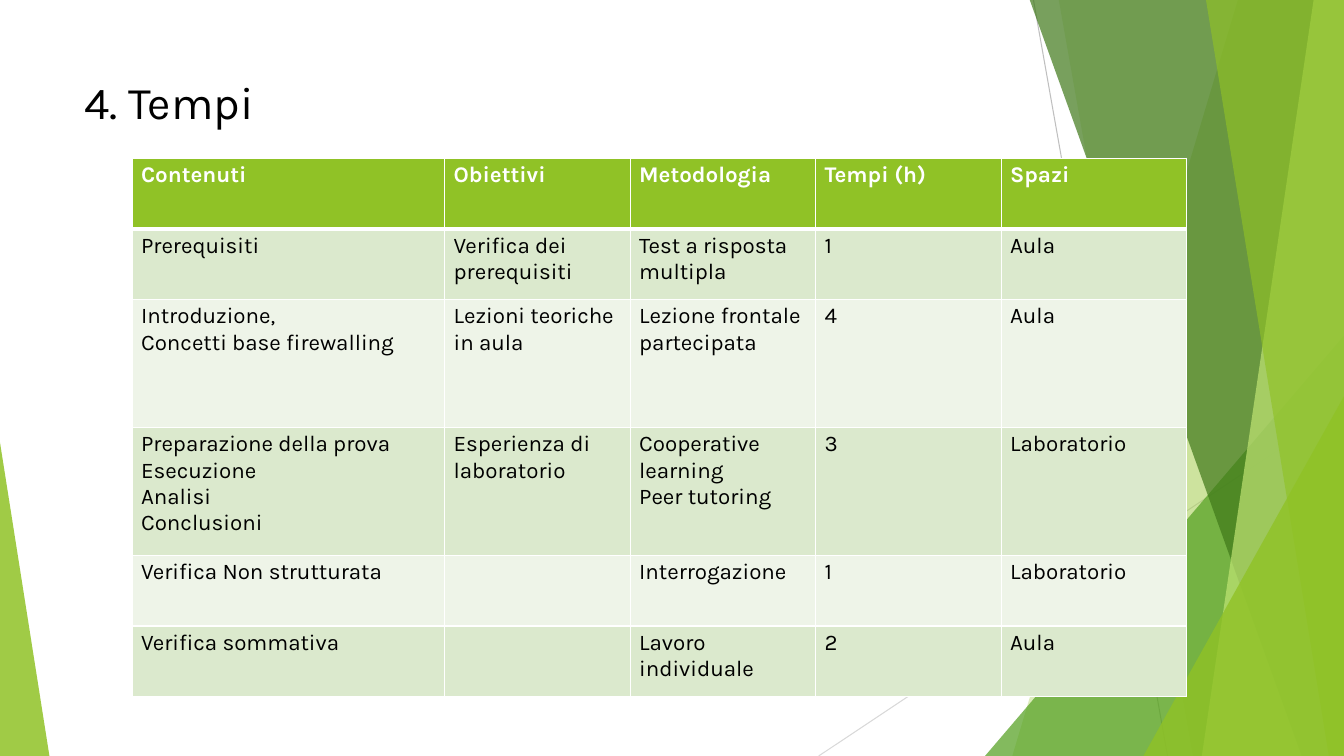
from dataclasses import dataclass

from lxml import etree
from pptx import Presentation
from pptx import util as u
from pptx.dml import color
from pptx.enum import shapes, text
from pptx.oxml import ns

FONT = "Karla"
WIDTH, HEIGHT = 13.33, 7.5
GREEN, WHITE, BLACK = "90C226", "FFFFFF", "000000"
ROW_FILLS = ("EEF4E8", "DBE9CD")


@dataclass
class Ray:
    start: tuple[float, float]
    end: tuple[float, float]
    hex: str


@dataclass
class Band:
    """Strip that reaches the right edge; top and bottom are its left corners."""
    top: float
    bottom: float
    hex: str
    alpha: int


@dataclass
class Triangle:
    left: float
    top: float
    width: float
    apex: float
    hex: str
    alpha: int


RAYS = [
    Ray((10.25, 0), (11.58, HEIGHT), "BFBFBF"),
    Ray((WIDTH, 4.03), (8.12, HEIGHT), "D9D9D9"),
]
FACETS = [
    Band(12.28, 10.04, GREEN, 30),
    Band(10.5, 11.83, GREEN, 20),
    Triangle(9.77, 3.33, 3.56, 1, "54A021", 72),
    Band(10.21, 12.91, "3F7819", 70),
    Band(13.03, 11.92, "C0E474", 70),
    Band(11.96, 13.18, GREEN, 65),
    Triangle(11.34, 3.93, 1.99, 1, GREEN, 80),
    Triangle(0, 4.39, 0.49, 0, GREEN, 85),
]
COLUMN_WIDTHS = [3.1] + [1.84] * 4
ROW_HEIGHTS = [0.7, 0.7, 1.27, 1.27, 0.7, 0.7]
SCHEDULE = [
    ["Contenuti", "Obiettivi", "Metodologia", "Tempi (h)", "Spazi"],
    ["Prerequisiti", "Verifica dei prerequisiti", "Test a risposta multipla", "1", "Aula"],
    ["Introduzione,\nConcetti base firewalling", "Lezioni teoriche in aula",
     "Lezione frontale partecipata", "4", "Aula"],
    ["Preparazione della prova\nEsecuzione\nAnalisi\nConclusioni",
     "Esperienza di laboratorio", "Cooperative learning\nPeer tutoring", "3", "Laboratorio"],
    ["Verifica Non strutturata", "", "Interrogazione", "1", "Laboratorio"],
    ["Verifica sommativa", "", "Lavoro individuale", "2", "Aula"],
]


def rgb(value: str) -> color.RGBColor:
    return color.RGBColor.from_string(value)


def style_text(tf, size: float, hex: str, bold: bool = False) -> None:
    for p in tf.paragraphs:
        for r in p.runs:
            r.font.name = FONT
            r.font.size = u.Pt(size)
            r.font.bold = bold
            r.font.color.rgb = rgb(hex)


def draw_ray(s, ray: Ray) -> None:
    points = [u.Inches(v) for v in (*ray.start, *ray.end)]
    line = s.shapes.add_connector(shapes.MSO_CONNECTOR.STRAIGHT, *points)
    line.line.color.rgb = rgb(ray.hex)
    line.line.width = u.Pt(0.75)
    etree.SubElement(line._element.spPr, ns.qn("a:effectLst"))


def draw_facet(s, facet: Band | Triangle) -> None:
    if isinstance(facet, Band):
        corners = [(facet.top, -0.01), (WIDTH, -0.01), (WIDTH, HEIGHT), (facet.bottom, HEIGHT)]
        points = [(u.Inches(x), u.Inches(y)) for x, y in corners]
        builder = s.shapes.build_freeform(*points[0])
        builder.add_line_segments(points[1:], close=True)
        sp = builder.convert_to_shape()
    else:
        sp = s.shapes.add_shape(
            shapes.MSO_SHAPE.ISOSCELES_TRIANGLE, u.Inches(facet.left), u.Inches(facet.top),
            u.Inches(facet.width), u.Inches(HEIGHT - facet.top))
        sp.adjustments[0] = facet.apex
    sp.shadow.inherit = False
    sp.fill.solid()
    sp.fill.fore_color.rgb = rgb(facet.hex)
    sp.line.fill.background()
    fill_color = sp._element.spPr.find(ns.qn("a:solidFill"))[0]
    etree.SubElement(fill_color, ns.qn("a:alpha"), val=str(facet.alpha * 1000))


def set_borders(cell, top: float, bottom: float) -> None:
    tc_pr = cell._tc.get_or_add_tcPr()
    for side, width in (("L", 1), ("R", 1), ("T", top), ("B", bottom)):
        ln = etree.SubElement(tc_pr, ns.qn(f"a:ln{side}"), w=str(u.Pt(width)))
        fill = etree.SubElement(ln, ns.qn("a:solidFill"))
        etree.SubElement(fill, ns.qn("a:srgbClr"), val=WHITE)


def draw_title(s) -> None:
    sp = s.shapes.add_textbox(u.Inches(0.74), u.Inches(0.67), u.Inches(9.4), u.Inches(0.67))
    tf = sp.text_frame
    tf.word_wrap = True
    tf.vertical_anchor = text.MSO_ANCHOR.MIDDLE
    tf.text = "4. Tempi"
    style_text(tf, 32.4, BLACK)


def draw_schedule(s) -> None:
    frame = s.shapes.add_table(
        len(ROW_HEIGHTS), len(COLUMN_WIDTHS), u.Inches(1.31), u.Inches(1.57),
        u.Inches(sum(COLUMN_WIDTHS)), u.Inches(sum(ROW_HEIGHTS)))
    table = frame.table
    for column, width in zip(table.columns, COLUMN_WIDTHS):
        column.width = u.Inches(width)
    for i, (row, height) in enumerate(zip(table.rows, ROW_HEIGHTS)):
        row.height = u.Inches(height)
        header = i == 0
        for cell, content in zip(row.cells, SCHEDULE[i]):
            cell.margin_left = cell.margin_right = u.Inches(0.09)
            cell.margin_top = cell.margin_bottom = u.Inches(0.04)
            cell.text_frame.text = content
            style_text(cell.text_frame, 16, WHITE if header else BLACK, header)
            set_borders(cell, top=3 if i == 1 else 1, bottom=3 if header else 1)
            cell.fill.solid()
            cell.fill.fore_color.rgb = rgb(GREEN if header else ROW_FILLS[i % 2])


def main() -> None:
    prs = Presentation()
    prs.slide_width, prs.slide_height = u.Inches(WIDTH), u.Inches(HEIGHT)
    s = prs.slides.add_slide(prs.slide_layouts[6])

    # Background decoration
    for ray in RAYS:
        draw_ray(s, ray)
    for facet in FACETS:
        draw_facet(s, facet)

    # Content
    draw_title(s)
    draw_schedule(s)
    prs.save("out.pptx")


if __name__ == "__main__":
    main()
